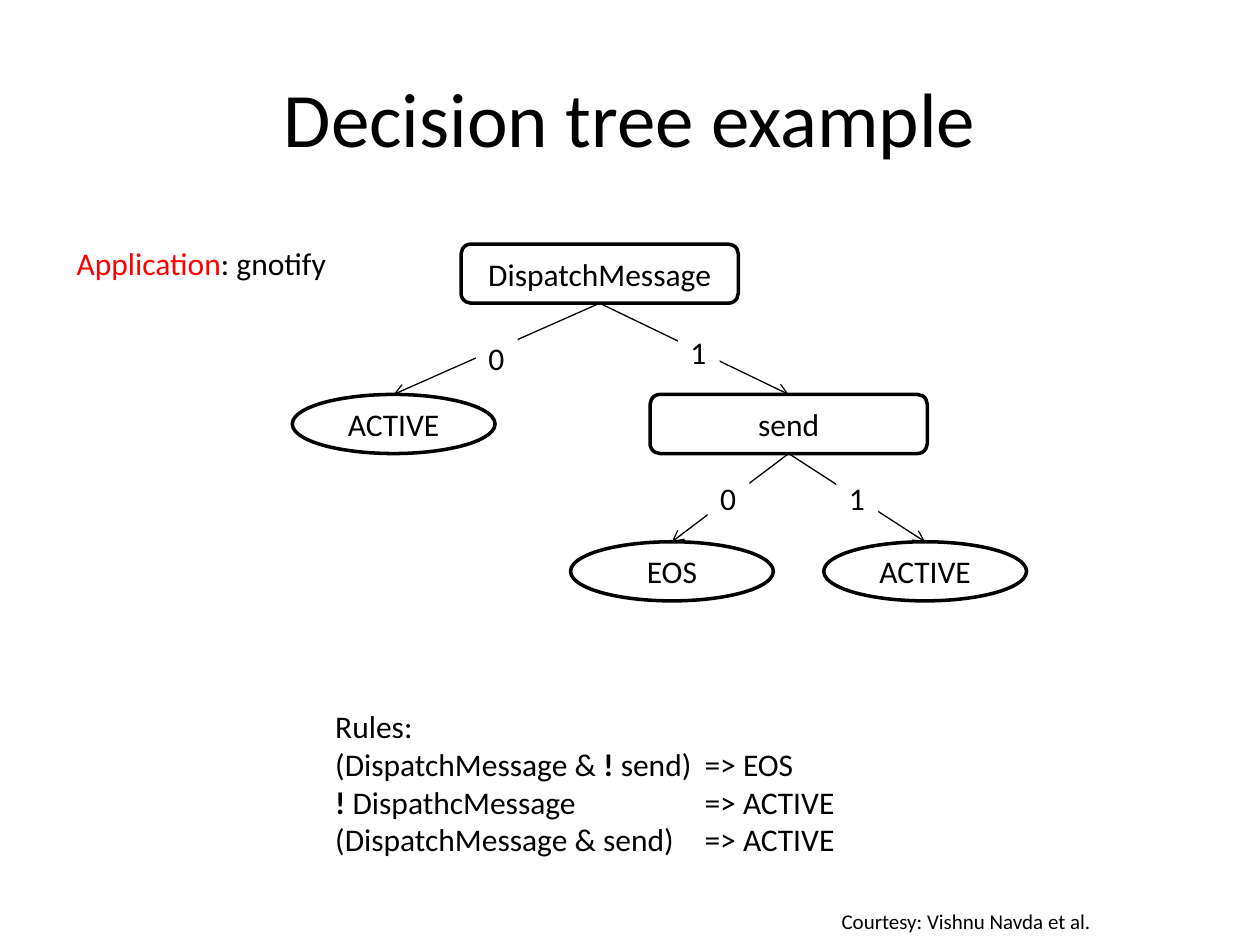
from dataclasses import dataclass

from lxml import etree
from pptx import Presentation
from pptx import util as u
from pptx.dml import color
from pptx.enum import shapes, text
from pptx.oxml import ns

FONT = "Calibri"
BLACK, WHITE, RED = "000000", "FFFFFF", "FF0000"
NODE_HEIGHT = 33.8
RULE_TAB = 211


@dataclass(frozen=True)
class Node:
    label: str
    left: float
    top: float
    is_leaf: bool = False


@dataclass(frozen=True)
class Branch:
    parent: Node
    child: Node
    value: str
    label_left: float
    label_top: float


@dataclass(frozen=True)
class Span:
    words: str
    bold: bool = False
    fill: str = BLACK


def rgb(value: str) -> color.RGBColor:
    return color.RGBColor.from_string(value)


def add_span(para, span: Span, size: float) -> None:
    run = para.add_run()
    run.text = span.words
    run.font.name = FONT
    run.font.size = u.Pt(size)
    run.font.bold = span.bold
    run.font.color.rgb = rgb(span.fill)


def add_text(page, left: float, top: float, width: float, height: float,
             lines: list[list[Span]], size: float = 18, wrap: bool = False,
             tab: float | None = None):
    box = page.shapes.add_textbox(u.Pt(left), u.Pt(top), u.Pt(width), u.Pt(height))
    frame = box.text_frame
    frame.word_wrap = wrap
    frame.auto_size = text.MSO_AUTO_SIZE.SHAPE_TO_FIT_TEXT
    for index, spans in enumerate(lines):
        para = frame.add_paragraph() if index else frame.paragraphs[0]
        if tab is not None:
            stops = etree.SubElement(para._p.get_or_add_pPr(), ns.qn("a:tabLst"))
            etree.SubElement(stops, ns.qn("a:tab"), pos=str(u.Pt(tab)), algn="l")
        for span in spans:
            add_span(para, span, size)
    return box


def add_node(page, node: Node):
    kinds = shapes.MSO_SHAPE
    kind, width = (kinds.OVAL, 115.9) if node.is_leaf else (kinds.ROUNDED_RECTANGLE, 158.4)
    shape = page.shapes.add_shape(kind, u.Pt(node.left), u.Pt(node.top),
                                  u.Pt(width), u.Pt(NODE_HEIGHT))
    shape.shadow.inherit = False
    shape.fill.background()
    shape.line.color.rgb = rgb(BLACK)
    shape.line.width = u.Pt(2)
    frame = shape.text_frame
    frame.vertical_anchor = text.MSO_ANCHOR.MIDDLE
    frame.paragraphs[0].alignment = text.PP_ALIGN.CENTER
    add_span(frame.paragraphs[0], Span(node.label), 18)
    return shape


def add_arrow(page, parent, child) -> None:
    arrow = page.shapes.add_connector(shapes.MSO_CONNECTOR.STRAIGHT, 0, 0, 0, 0)
    arrow.begin_connect(parent, 2)
    arrow.end_connect(child, 0)
    arrow.line.color.rgb = rgb(BLACK)
    arrow.line.width = u.Pt(0.75)
    etree.SubElement(arrow.line._get_or_add_ln(), ns.qn("a:tailEnd"), type="arrow")
    etree.SubElement(arrow._element.spPr, ns.qn("a:effectLst"))


def add_branch_label(page, branch: Branch) -> None:
    box = add_text(page, branch.label_left, branch.label_top, 23.8, 29,
                   [[Span(branch.value)]])
    box.fill.solid()
    box.fill.fore_color.rgb = rgb(WHITE)


# Tree content
ROOT = Node("DispatchMessage", 263.5, 139.5)
SEND = Node("send", 371.5, 225.4)
ROOT_ACTIVE = Node("ACTIVE", 167, 225.4, True)
SEND_EOS = Node("EOS", 326, 309.6, True)
SEND_ACTIVE = Node("ACTIVE", 470.7, 309.6, True)
NODES = [ROOT, SEND, ROOT_ACTIVE, SEND_EOS, SEND_ACTIVE]
BRANCHES = [
    Branch(ROOT, ROOT_ACTIVE, "0", 272, 190),
    Branch(ROOT, SEND, "1", 387.4, 186.7),
    Branch(SEND, SEND_EOS, "0", 404.4, 270),
    Branch(SEND, SEND_ACTIVE, "1", 478, 270),
]
RULES = [
    [Span("Rules:")],
    [Span("(DispatchMessage & "), Span("! ", bold=True), Span("send)\t=> EOS")],
    [Span("! ", bold=True), Span("DispathcMessage\t=> ACTIVE")],
    [Span("(DispatchMessage & send)\t=> ACTIVE")],
]


def main() -> None:
    deck = Presentation()
    deck.slide_width, deck.slide_height = u.Pt(720), u.Pt(540)
    page = deck.slides.add_slide(deck.slide_layouts[5])

    # Title
    title = page.shapes.title
    title.left, title.top, title.width, title.height = map(u.Pt, (36, 21.6, 648, 90))
    title.text_frame.vertical_anchor = text.MSO_ANCHOR.MIDDLE
    para = title.text_frame.paragraphs[0]
    para.alignment = text.PP_ALIGN.CENTER
    add_span(para, Span("Decision tree example"), 44)

    # Decision tree: nodes, arrows, then labels over the arrows
    drawn = {node: add_node(page, node) for node in NODES}
    for branch in BRANCHES:
        add_arrow(page, drawn[branch.parent], drawn[branch.child])
    for branch in BRANCHES:
        add_branch_label(page, branch)

    # Application, rules and credit
    add_text(page, 36.7, 136, 159, 29, [[Span("Application", fill=RED), Span(": gnotify")]])
    add_text(page, 184.5, 400.5, 304, 94.5, RULES, wrap=True, tab=RULE_TAB)
    add_text(page, 473.8, 515.6, 159, 21.8, [[Span("Courtesy: Vishnu Navda et al.")]], size=12)

    deck.save("out.pptx")


if __name__ == "__main__":
    main()
